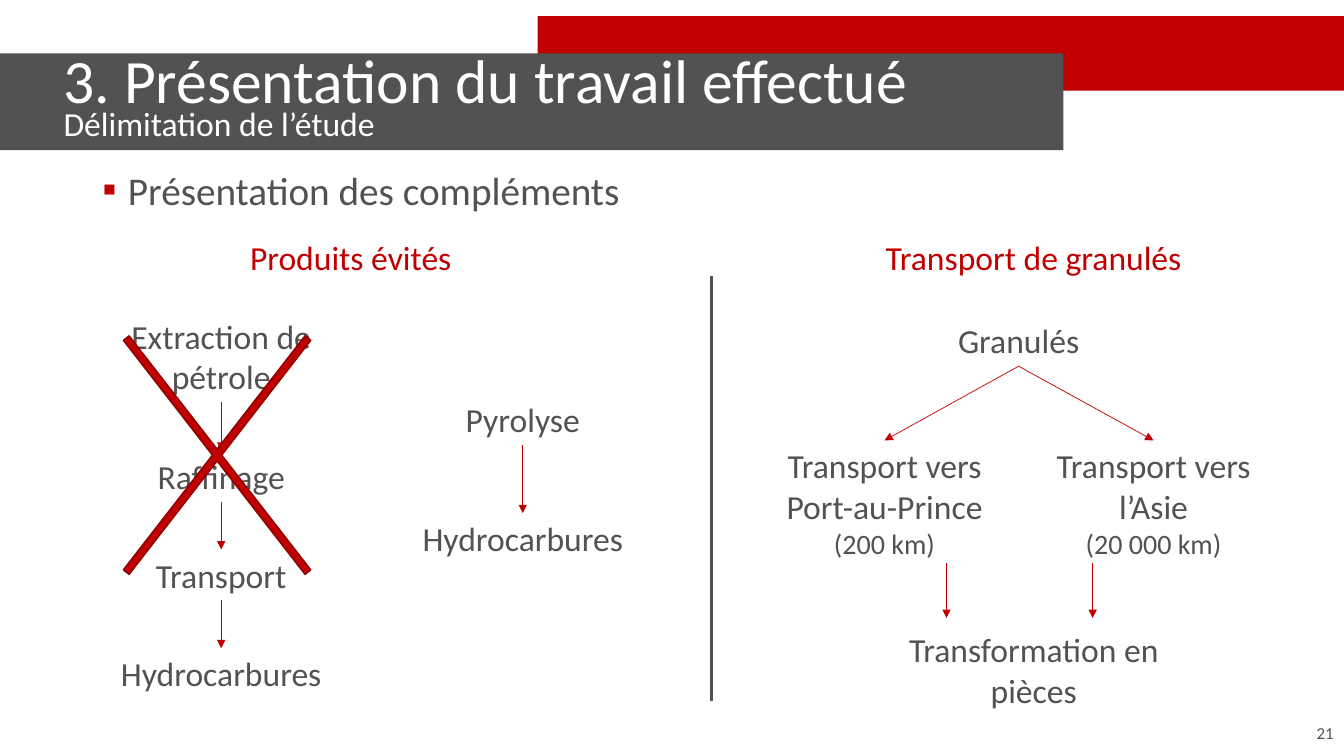
import pptx
import pptx.util
import pptx.dml.color
import pptx.enum.shapes
import pptx.enum.text
import pptx.oxml
import pptx.oxml.ns

Pt = pptx.util.Pt
KIND = pptx.enum.shapes.MSO_SHAPE
ALIGN = pptx.enum.text.PP_ALIGN
MID = pptx.enum.text.MSO_ANCHOR.MIDDLE
RED, GREY, WHITE = "C00000", "525252", "FFFFFF"
NS = pptx.oxml.ns.nsdecls("a")

deck = pptx.Presentation()
deck.slide_width, deck.slide_height = Pt(960), Pt(540)
slide = deck.slides.add_slide(deck.slide_layouts[1])
shapes = slide.shapes


def paint(fill, tint):
    """Make a fill solid in the given hex colour."""
    fill.solid()
    fill.fore_color.rgb = pptx.dml.color.RGBColor.from_string(tint)


def write(box, text, sizes, tint=GREY, align=ALIGN.CENTER, space=1.0):
    """Set the text; sizes go to the runs in order, the last one to the rest."""
    frame = box.text_frame
    frame.word_wrap = True
    frame.auto_size = pptx.enum.text.MSO_AUTO_SIZE.NONE
    frame.text = text
    runs = []
    for para in frame.paragraphs:
        para.alignment, para.line_spacing = align, space
        para.space_before = Pt(0)
        runs += para.runs
    for i, run in enumerate(runs):
        run.font.name = "Calibri"
        run.font.size = Pt(sizes[min(i, len(sizes) - 1)])
        paint(run.font.fill, tint)


# Header bars and title
for left, top, wide, high, tint in [(384, 11.5, 576, 53.3, RED),
                                    (0, 38.2, 759.6, 69.1, GREY)]:
    bar = shapes.add_shape(KIND.RECTANGLE, Pt(left), Pt(top), Pt(wide), Pt(high))
    bar.shadow.inherit = False
    paint(bar.fill, tint)
    bar.line.fill.background()

title = shapes.title
title.left, title.top, title.width, title.height = Pt(38.2), Pt(25.2), Pt(722), Pt(95)
title.text_frame.vertical_anchor = MID
write(title, "3. Présentation du travail effectué\vDélimitation de l’étude",
      [44, 24], WHITE, ALIGN.LEFT, 0.7)
shapes.element.append(title.element)  # in front of the bars

# Bullet line
body = slide.placeholders[1]
body.left, body.top, body.width, body.height = Pt(66.2), Pt(121.7), Pt(828), Pt(36)
write(body, "Présentation des compléments", [28], GREY, ALIGN.LEFT, 0.8)
props = body.text_frame.paragraphs[0]._p.get_or_add_pPr()
props.set("marL", "228600")
props.set("indent", "-228600")
for xml in (f'<a:buClr {NS}><a:srgbClr val="{RED}"/></a:buClr>',
            f'<a:buFont {NS} typeface="Calibri"/>',
            f'<a:buChar {NS} char="▪"/>'):
    props.append(pptx.oxml.parse_xml(xml))

# Headings
for text, left, wide in [("Produits évités", 166.3, 168.5),
                         ("Transport de granulés", 620.6, 235.4)]:
    head = shapes.add_textbox(Pt(left), Pt(169.2), Pt(wide), Pt(36))
    write(head, text, [24], RED, space=0.9)

# Steps: key, text, centre, top, width, height
steps = [
    ("crude", "Extraction de pétrole", 158, 221.8, 183, 65.4),
    ("refine", "Raffinage", 158, 322, 183, 36.3),
    ("move", "Transport", 158, 392.5, 183, 36.3),
    ("fuel", "Hydrocarbures", 158, 463, 183, 36.3),
    ("burn", "Pyrolyse", 373.4, 281.5, 193, 36.3),
    ("oil", "Hydrocarbures", 373.4, 366.5, 193, 36.3),
    ("grain", "Granulés", 727.6, 225.3, 193, 36.3),
    ("port", "Transport vers Port-au-Prince\n(200 km)", 631.8, 314.6, 193, 90),
    ("far", "Transport vers l’Asie\n(20 000 km)", 824, 314.6, 193, 90),
    ("parts", "Transformation en pièces", 738.4, 445.8, 193, 65.4),
]
boxes = {}
for key, text, mid, top, wide, high in steps:
    box = shapes.add_textbox(Pt(mid - wide / 2), Pt(top), Pt(wide), Pt(high))
    write(box, text, [24, 20])
    boxes[key] = box

# Divider and arrows: start, end, colour, weight, joined steps
lines = [((508.3, 500.4), (508.3, 197.3), GREY, 2.25, None)]
lines += [((x, 402.5), (x, 441.4), RED, 0.5, None) for x in (676.1, 780.5)]
lines += [((0, 0), (0, 0), RED, 0.5, pair) for pair in [
    ("crude", "refine"), ("refine", "move"), ("move", "fuel"),
    ("burn", "oil"), ("grain", "port"), ("grain", "far")]]
for start, end, tint, weight, pair in lines:
    line = shapes.add_connector(pptx.enum.shapes.MSO_CONNECTOR.STRAIGHT,
                                *map(Pt, start + end))
    if pair:
        line.begin_connect(boxes[pair[0]], 2)
        line.end_connect(boxes[pair[1]], 0)
    paint(line.line.fill, tint)
    line.line.width = Pt(weight)
    if tint == RED:
        line.line._get_or_add_ln().append(
            pptx.oxml.parse_xml(f'<a:tailEnd {NS} type="triangle"/>'))
    line._element.spPr.append(pptx.oxml.parse_xml(f"<a:effectLst {NS}/>"))

# Cross over the avoided steps
cross = shapes.add_shape(KIND.MATH_MULTIPLY, Pt(30.2), Pt(164.2), Pt(249.8), Pt(321.8))
cross.adjustments[0] = 0.021
cross.shadow.inherit = False
paint(cross.fill, RED)
paint(cross.line.fill, "8E0000")
cross.line.width = Pt(1)

# Page number
page = shapes.add_textbox(Pt(743.8), Pt(509), Pt(216), Pt(28.8))
page.text_frame.vertical_anchor = MID
write(page, "21", [12], align=ALIGN.RIGHT)

deck.save("out.pptx")
